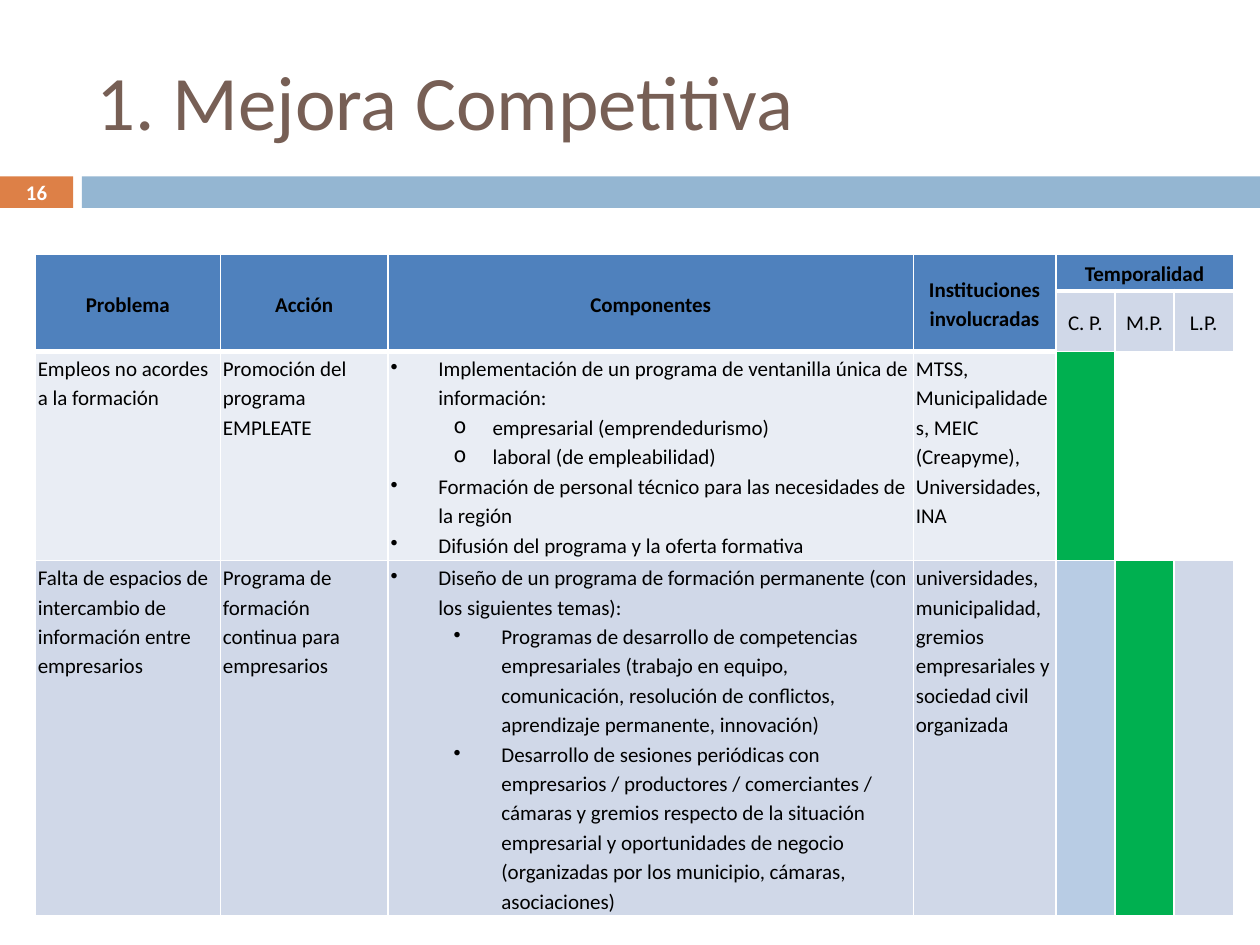
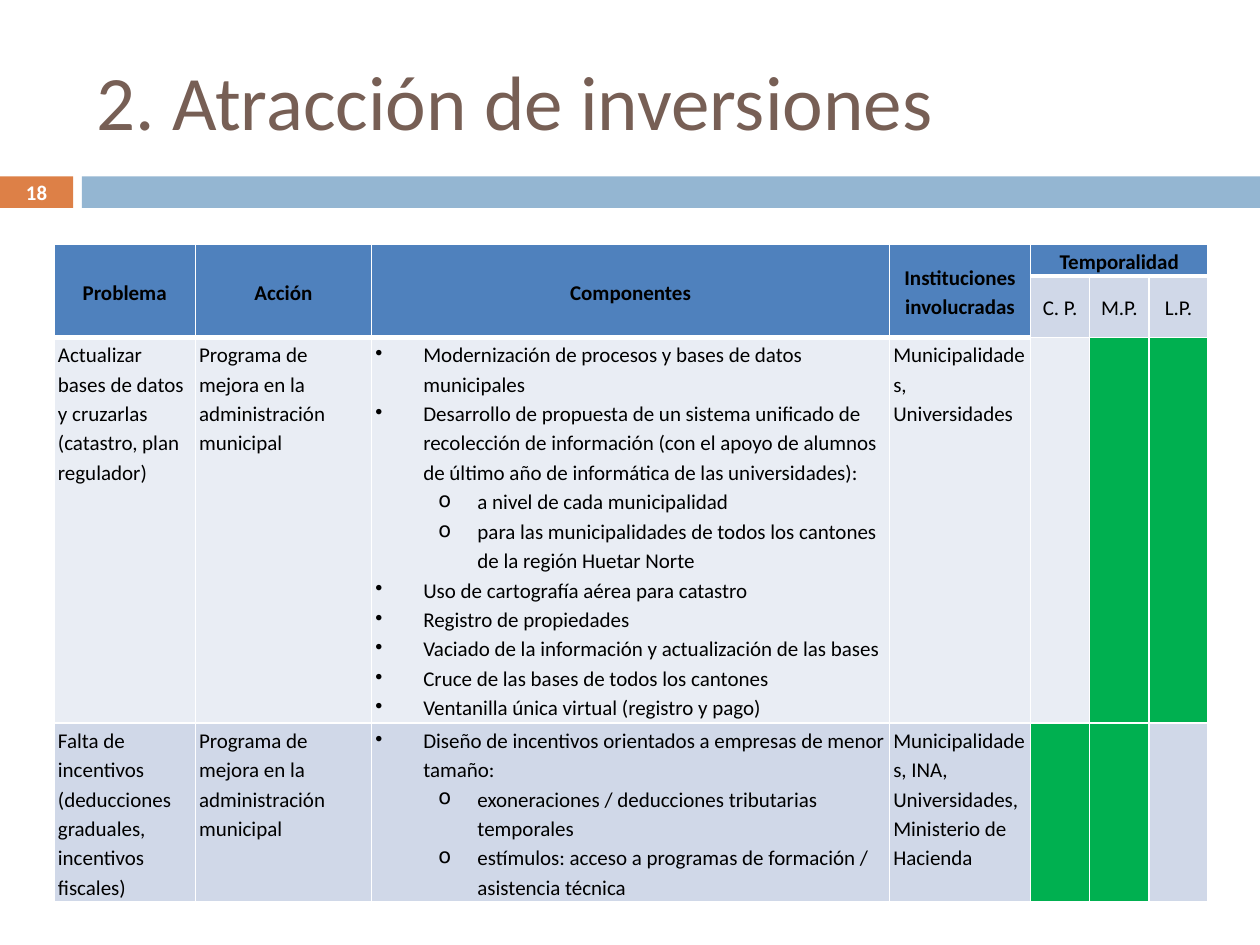
from lxml.etree import SubElement
from pptx import Presentation
from pptx.dml.color import RGBColor
from pptx.enum.shapes import MSO_SHAPE
from pptx.enum.text import MSO_ANCHOR, PP_ALIGN
from pptx.oxml.ns import qn
from pptx.util import Inches, Pt

INK = {
    "title": "775F55", "orange": "DD8047", "band": "94B6D2",
    "head": "4F81BD", "pale": "E9EDF4", "tint": "D0D8E8",
    "soft": "B8CCE4", "green": "00B050", "white": "FFFFFF", "black": "000000",
}
FACE = "Calibri"
HEADS = ["Problema", "Acción", "Componentes", "Instituciones involucradas"]
TERMS = ["C. P.", "M.P.", "L.P."]
TERM_WIDTH = 4.7
# Bullet kinds: level, indent and hang in grid columns, mark
KINDS = {
    "main": (0, 3.8, 3.8, "•"),
    "sub": (1, 8.1, 3.1, "o"),
    "deep": (1, 8.8, 3.8, "•"),
}


def is_head(row, col):
    return row == 0 or (row == 1 and col < len(HEADS))


class Deck:
    """Holds the style and the current slide; lengths are 1/100 of the width."""

    def __init__(self):
        self.show = Presentation()
        self.show.slide_width = Inches(10)
        self.show.slide_height = Inches(7.5)
        self.unit = self.show.slide_width / 100

    def size(self, *steps):
        return [round(step * self.unit) for step in steps]

    def color(self, name):
        return RGBColor.from_string(INK[name])

    def paint(self, fill, name):
        fill.solid()
        fill.fore_color.rgb = self.color(name)

    def style(self, para, size, name, bold=False, align=PP_ALIGN.LEFT):
        para.alignment = align
        font = para.font
        font.name, font.size, font.bold = FACE, Pt(size), bold
        font.color.rgb = self.color(name)

    def bar(self, box, name):
        shape = self.slide.shapes.add_shape(MSO_SHAPE.RECTANGLE, *self.size(*box))
        shape.shadow.inherit = False
        shape.line.fill.background()
        self.paint(shape.fill, name)

    def label(self, box, text, *look):
        frame = self.slide.shapes.add_textbox(*self.size(*box)).text_frame
        frame.word_wrap = True
        frame.vertical_anchor = MSO_ANCHOR.MIDDLE
        frame.text = text
        self.style(frame.paragraphs[0], *look)

    def page(self, title, number):
        blank = self.show.slide_layouts[6]
        self.slide = self.show.slides.add_slide(blank)
        self.bar((0, 14, 5.8, 2.5), "orange")
        self.bar((6.5, 14, 93.5, 2.5), "band")
        self.label((6.7, 2.5, 89.2, 10.8), title, 44, "title")
        self.label((0, 13.9, 5.8, 2.7), number, 11.9, "white", True, PP_ALIGN.CENTER)

    def edges(self, cell, row, col):
        tops = 3 if row and is_head(row - 1, col) else 1
        ends = 3 if is_head(row, col) else 1
        props = cell._tc.get_or_add_tcPr()
        for side, width in zip("LRTB", (1, 1, tops, ends)):
            line = SubElement(props, qn(f"a:ln{side}"), w=str(Pt(width)))
            fill = SubElement(line, qn("a:solidFill"))
            SubElement(fill, qn("a:srgbClr"), val=INK["white"])

    def bullet(self, para, kind):
        level, indent, hang, mark = KINDS[kind]
        para.level = level
        props = para._p.get_or_add_pPr()
        left, back = self.size(indent, hang)
        props.set("marL", str(left))
        props.set("indent", str(-back))
        SubElement(props, qn("a:buChar"), char=mark)

    def enter(self, cell, items, bold=False, align=PP_ALIGN.LEFT):
        """Enter plain text, or a list of (kind, text) bullets."""
        if isinstance(items, str):
            items = [(None, items)]
        frame = cell.text_frame
        frame.text = "\n".join(text for _, text in items)
        for para, (kind, _) in zip(frame.paragraphs, items):
            para.line_spacing = 1.15
            if kind:
                self.bullet(para, kind)
            self.style(para, 12, "black", bold, align)

    def plan(self, spot, widths, heights, pad, rows):
        widths = widths + [TERM_WIDTH] * len(TERMS)
        box = self.size(*spot, sum(widths), sum(heights))
        table = self.slide.shapes.add_table(len(heights), len(widths), *box).table
        table.first_row = table.horz_banding = False
        for col, width in zip(table.columns, self.size(*widths)):
            col.width = width
        for row, height in zip(table.rows, self.size(*heights)):
            row.height = height

        # Margins, borders and base fills
        for r in range(len(heights)):
            for c in range(len(widths)):
                cell = table.cell(r, c)
                cell.margin_left, cell.margin_right = self.size(pad, pad)
                cell.margin_top, cell.margin_bottom = self.size(0.1, 0.1)
                self.edges(cell, r, c)
                base = "pale" if r == 2 else "tint"
                self.paint(cell.fill, "head" if is_head(r, c) else base)
                para = cell.text_frame.paragraphs[0]
                SubElement(para._p, qn("a:endParaRPr"), sz="1200")

        # Heading rows
        first = len(HEADS)
        for c in range(first):
            table.cell(0, c).merge(table.cell(1, c))
        table.cell(0, first).merge(table.cell(0, len(widths) - 1))
        names = [(0, c, text) for c, text in enumerate(HEADS + ["Temporalidad"])]
        names += [(1, first + c, text) for c, text in enumerate(TERMS)]
        for r, c, text in names:
            cell = table.cell(r, c)
            cell.vertical_anchor = MSO_ANCHOR.MIDDLE
            self.enter(cell, text, r == 0, PP_ALIGN.CENTER)

        # Body rows
        for r, (texts, terms) in enumerate(rows, 2):
            for c, items in enumerate(texts):
                self.enter(table.cell(r, c), items)
            for c, name in enumerate(terms, first):
                self.paint(table.cell(r, c).fill, name)


def main():
    deck = Deck()

    # Competitive improvement
    deck.page("1. Mejora Competitiva", "16")
    deck.plan((2.8, 20.2), [14.7, 13.3, 41.7, 11.3], [2.9, 4.8, 16.6, 28.2], 0.2, [
        ([
            "Empleos no acordes a la formación",
            "Promoción del programa EMPLEATE",
            [
                ("main", "Implementación de un programa de ventanilla única de información:"),
                ("sub", "empresarial (emprendedurismo)"),
                ("sub", "laboral (de empleabilidad)"),
                ("main", "Formación de personal técnico para las necesidades de la región"),
                ("main", "Difusión del programa y la oferta formativa"),
            ],
            "MTSS, Municipalidades, MEIC (Creapyme), Universidades, INA",
        ], ["green", "white", "white"]),
        ([
            "Falta de espacios de intercambio de información entre empresarios",
            "Programa de formación continua para empresarios",
            [
                ("main", "Diseño de un programa de formación permanente "
                         "(con los siguientes temas):"),
                ("deep", "Programas de desarrollo de competencias empresariales "
                         "(trabajo en equipo, comunicación, resolución de conflictos, "
                         "aprendizaje permanente, innovación)"),
                ("deep", "Desarrollo de sesiones periódicas con empresarios / productores / "
                         "comerciantes / cámaras y gremios respecto de la situación "
                         "empresarial y oportunidades de negocio "
                         "(organizadas por los municipio, cámaras, asociaciones)"),
            ],
            "universidades, municipalidad, gremios empresariales y sociedad civil organizada",
        ], ["soft", "green", "tint"]),
    ])

    # Attracting investment
    deck.page("2. Atracción de inversiones", "18")
    action = "Programa de mejora en la administración municipal"
    deck.plan((4.3, 19.4), [11.2, 14, 41.1, 11.2], [2.5, 4.9, 30.6, 14.2], 0.3, [
        ([
            "Actualizar bases de datos y cruzarlas (catastro, plan regulador)",
            action,
            [
                ("main", "Modernización de procesos y bases de datos municipales"),
                ("main", "Desarrollo de propuesta de un sistema unificado de recolección "
                         "de información (con el apoyo de alumnos de último año de "
                         "informática de las universidades):"),
                ("sub", "a nivel de cada municipalidad"),
                ("sub", "para las municipalidades de todos los cantones "
                        "de la región Huetar Norte"),
                ("main", "Uso de cartografía aérea para catastro"),
                ("main", "Registro de propiedades"),
                ("main", "Vaciado de la información y actualización de las bases"),
                ("main", "Cruce de las bases de todos los cantones"),
                ("main", "Ventanilla única virtual (registro y pago)"),
            ],
            "Municipalidades, Universidades",
        ], ["pale", "green", "green"]),
        ([
            "Falta de incentivos (deducciones graduales, incentivos fiscales)",
            action,
            [
                ("main", "Diseño de incentivos orientados a empresas de menor tamaño:"),
                ("sub", "exoneraciones / deducciones tributarias temporales"),
                ("sub", "estímulos: acceso a programas de formación / asistencia técnica"),
            ],
            "Municipalidades, INA, Universidades, Ministerio de Hacienda",
        ], ["green", "green", "tint"]),
    ])
    deck.show.save("out.pptx")


if __name__ == "__main__":
    main()
